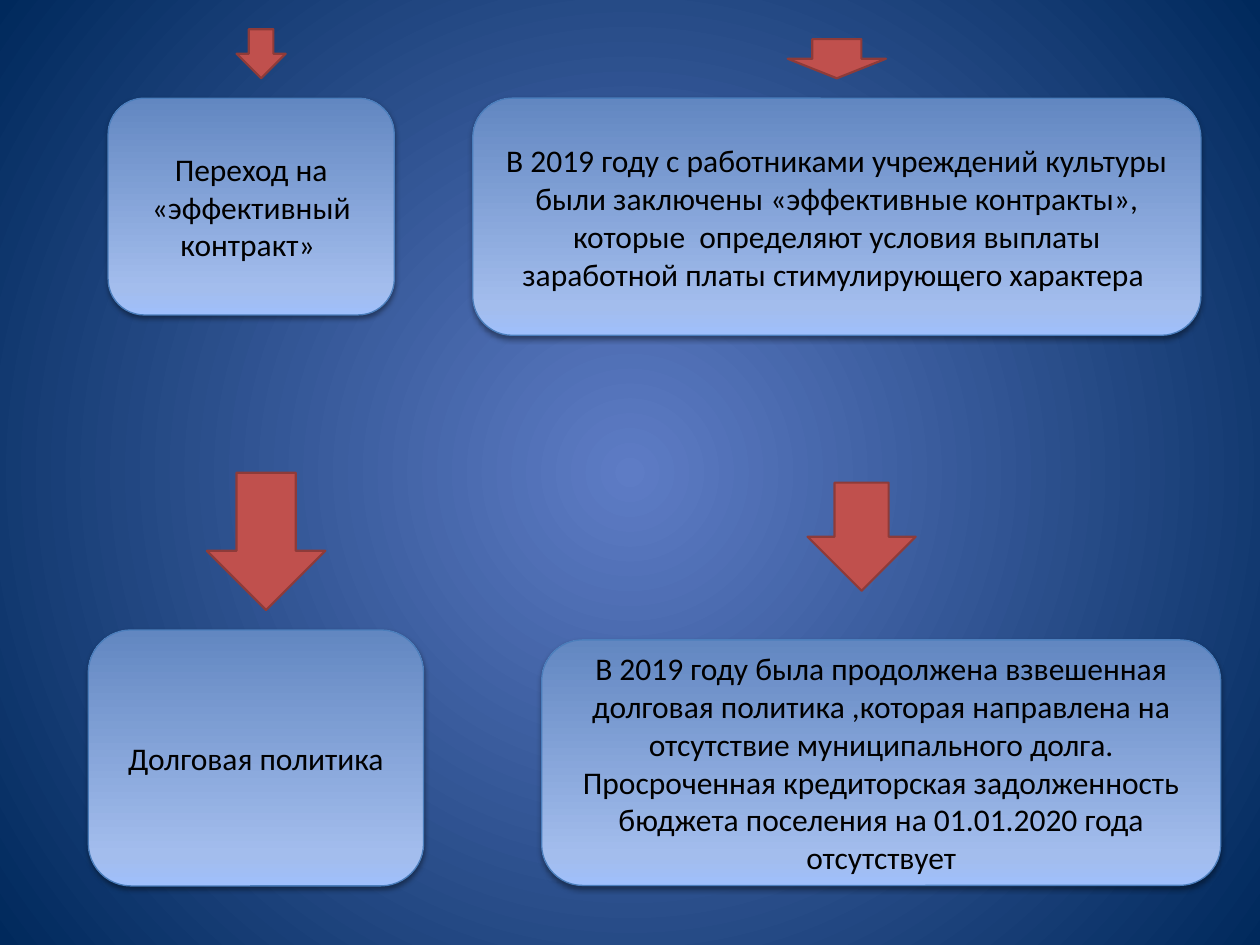
from lxml import etree
from pptx import Presentation
from pptx.dml.color import RGBColor
from pptx.enum.shapes import MSO_SHAPE
from pptx.enum.text import MSO_ANCHOR, PP_ALIGN
from pptx.oxml import parse_xml
from pptx.oxml.ns import nsdecls, qn
from pptx.util import Cm, Pt

CARD_STOPS = [(0, "9FBFFB"), (12, "A3BDED"), (100, "6287C1")]
BACK_STOPS = [(0, "5E7CC5"), (100, "00295C")]
FONT = {"name": "Calibri", "size": Pt(18)}

# Each step: card box, arrow (left offset, width, height, gap above card), text
STEPS = [
    ((2.18, 1.98, 5.77, 4.37), (2.59, 0.99, 0.99, 0.4),
     "Переход на «эффективный контракт» "),
    ((9.53, 1.98, 14.68, 4.78), (6.35, 1.98, 0.79, 0.4),
     "В 2019 году с работниками учреждений культуры были заключены "
     "«эффективные контракты», которые  определяют условия выплаты "
     "заработной платы стимулирующего характера "),
    ((1.78, 12.7, 6.76, 5.16), (2.39, 2.39, 2.77, 0.4),
     "Долговая политика"),
    ((10.92, 12.9, 13.69, 4.95), (5.36, 2.18, 2.18, 0.99),
     "В 2019 году была продолжена взвешенная долговая политика ,которая "
     "направлена на отсутствие муниципального долга. Просроченная "
     "кредиторская задолженность бюджета поселения на 01.01.2020 года "
     "отсутствует"),
]


def color(value):
    return RGBColor.from_string(value)


def set_gradient(fill, owner, stops, direction):
    """Fill with the given stops; direction is the a:lin or a:path element."""
    fill.gradient()
    grad = owner.find(".//" + qn("a:gradFill"))
    for child in list(grad):
        grad.remove(child)
    gs = "".join(f'<a:gs pos="{pos * 1000}"><a:srgbClr val="{c}"/></a:gs>'
                 for pos, c in stops)
    new = parse_xml(f'<a:gradFill {nsdecls("a")}><a:gsLst>{gs}</a:gsLst>'
                    f'{direction}</a:gradFill>')
    grad.extend(list(new))


def add_shadow(sp):
    effects = sp._element.spPr.find(qn("a:effectLst"))
    shadow = etree.SubElement(effects, qn("a:outerShdw"), blurRad=str(Pt(3.1)),
                              dist=str(Pt(1.6)), dir="5400000",
                              rotWithShape="0")
    clr = etree.SubElement(shadow, qn("a:srgbClr"), val="000000")
    etree.SubElement(clr, qn("a:alpha"), val="38000")


def add_outlined(s, kind, box, line, width):
    sp = s.shapes.add_shape(kind, *(Cm(v) for v in box))
    sp.shadow.inherit = False
    sp.line.color.rgb = color(line)
    sp.line.width = Pt(width)
    return sp


def add_background(s):
    set_gradient(s.background.fill, s._element, BACK_STOPS,
                 '<a:path path="circle"><a:fillToRect l="50000" t="50000" '
                 'r="50000" b="50000"/></a:path>')


def add_step(s, box, arrow, text):
    left, top, _, _ = box
    dx, width, height, gap = arrow

    # Card
    sp = add_outlined(s, MSO_SHAPE.ROUNDED_RECTANGLE, box, "4B7EBC", 0.75)
    set_gradient(sp.fill, sp._element.spPr, CARD_STOPS,
                 '<a:lin ang="16200000" scaled="0"/>')
    add_shadow(sp)
    tf = sp.text_frame
    tf.word_wrap = True
    tf.vertical_anchor = MSO_ANCHOR.MIDDLE
    p = tf.paragraphs[0]
    p.alignment = PP_ALIGN.CENTER
    r = p.add_run()
    r.text = text
    for name, value in FONT.items():
        setattr(r.font, name, value)
    r.font.color.rgb = color("000000")

    # Arrow pointing down at the card
    arrow_box = (left + dx, top - gap - height, width, height)
    sp = add_outlined(s, MSO_SHAPE.DOWN_ARROW, arrow_box, "8E3B39", 1.25)
    sp.fill.solid()
    sp.fill.fore_color.rgb = color("C0504D")


def main():
    prs = Presentation()
    prs.slide_width, prs.slide_height = Cm(25.4), Cm(19.05)
    s = prs.slides.add_slide(prs.slide_layouts[6])
    add_background(s)
    for box, arrow, text in STEPS:
        add_step(s, box, arrow, text)
    prs.save("out.pptx")


if __name__ == "__main__":
    main()
